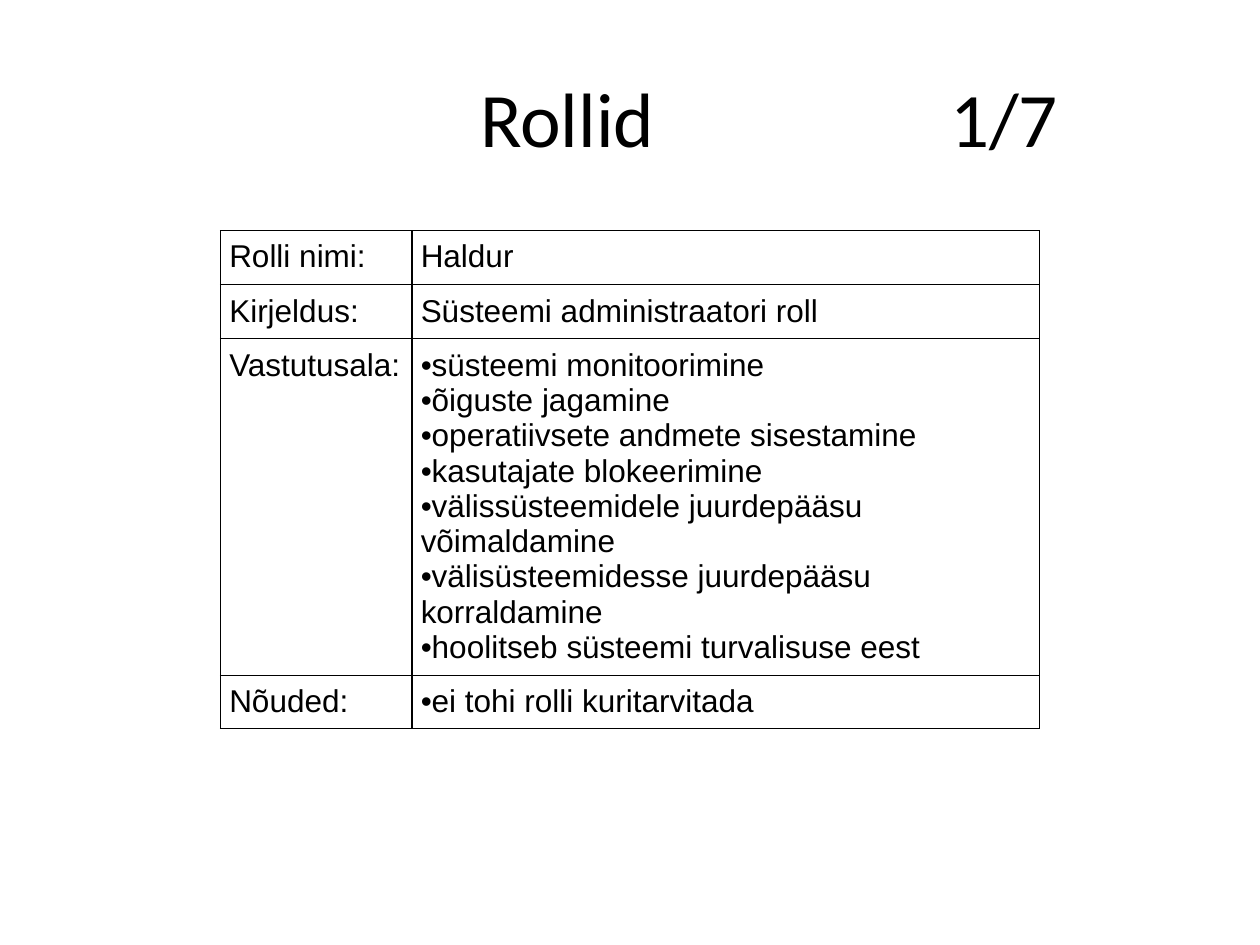
"""Build the role card slide: a title with a page count and a two-column table."""
from lxml import etree
from pptx import Presentation, util as u
from pptx.dml.color import RGBColor
from pptx.enum import text
from pptx.oxml import ns

TITLE = ("Rollid", "1/7")
ROWS = [
    ("Rolli nimi:", "Haldur"),
    ("Kirjeldus:", "Süsteemi administraatori roll"),
    ("Vastutusala:", [
        "süsteemi monitoorimine",
        "õiguste jagamine",
        "operatiivsete andmete sisestamine",
        "kasutajate blokeerimine",
        "välissüsteemidele juurdepääsu võimaldamine",
        "välisüsteemidesse juurdepääsu korraldamine",
        "hoolitseb süsteemi turvalisuse eest",
    ]),
    ("Nõuded:", ["ei tohi rolli kuritarvitada"]),
]
THEME = {
    "ink": "000000",
    "title": {"name": "Calibri", "size": u.Pt(44)},
    "body": {"name": "Arial", "size": u.Pt(18)},
    "border": u.Pt(0.75),
    "inset": u.Inches(0.07),
}
SLIDE_W, SLIDE_H = u.Inches(10), u.Inches(7.5)
TITLE_TABS = (3.21, 6.94)
TABLE_TOP = u.Inches(1.83)
COLUMNS = (1.52, 4.98)
ROW_HEIGHTS = (0.43, 0.43, 2.67, 0.42)


def set_attrs(obj, values):
    """Set each named value on an object."""
    for name, value in values.items():
        setattr(obj, name, value)


def add(parent, tag, **attrs):
    """Append a DrawingML element."""
    return etree.SubElement(parent, ns.qn(tag), attrs)


def style(p, role):
    """Give a paragraph the font of its role."""
    set_attrs(p.font, THEME[role])
    p.font.color.rgb = RGBColor.from_string(THEME["ink"])


def add_title(slide):
    """Place the title and its page count on tab stops."""
    sp = slide.shapes.title
    set_attrs(sp, dict(left=u.Inches(0.5), top=u.Inches(0.3),
                       width=u.Inches(9), height=u.Inches(1.25)))
    tf = sp.text_frame
    tf.vertical_anchor = text.MSO_ANCHOR.MIDDLE
    p = tf.paragraphs[0]
    p.text = "".join("\t" + part for part in TITLE)
    p.alignment = text.PP_ALIGN.LEFT
    tabs = add(p._p.get_or_add_pPr(), "a:tabLst")
    for pos in TITLE_TABS:
        add(tabs, "a:tab", pos=str(u.Inches(pos)), algn="l")
    style(p, "title")


def add_borders(cell):
    """Draw a thin line on all four sides of a cell."""
    tc_pr = cell._tc.get_or_add_tcPr()
    for i, side in enumerate("LRTB"):
        ln = add(tc_pr, f"a:ln{side}", w=str(THEME["border"]))
        add(add(ln, "a:solidFill"), "a:srgbClr", val=THEME["ink"])
        tc_pr.insert(i, ln)


def add_bullet(p):
    """Put a bullet in the body font before a paragraph."""
    p_pr = p._p.get_or_add_pPr()
    add(p_pr, "a:buFont", typeface=THEME["body"]["name"])
    add(p_pr, "a:buChar", char="•")


def fill_cell(cell, content):
    """Write plain text, or a list as bullets, into a cell."""
    bulleted = isinstance(content, list)
    lines = content if bulleted else [content]
    cell.fill.background()
    set_attrs(cell, {f"margin_{side}": THEME["inset"]
                     for side in ("left", "right", "top", "bottom")})
    add_borders(cell)
    tf = cell.text_frame
    tf.text = "\n".join(lines)
    for p in tf.paragraphs:
        if bulleted:
            add_bullet(p)
        style(p, "body")


def add_role_table(slide):
    """Add the role table, centred across the slide."""
    width = u.Inches(sum(COLUMNS))
    table = slide.shapes.add_table(
        len(ROWS), len(COLUMNS), (SLIDE_W - width) // 2, TABLE_TOP,
        width, u.Inches(sum(ROW_HEIGHTS))).table
    set_attrs(table, dict(first_row=False, horz_banding=False))
    for column, size in zip(table.columns, COLUMNS):
        column.width = u.Inches(size)
    for row, size, contents in zip(table.rows, ROW_HEIGHTS, ROWS):
        row.height = u.Inches(size)
        for cell, content in zip(row.cells, contents):
            fill_cell(cell, content)


def main():
    """Build and save the slide."""
    prs = Presentation()
    set_attrs(prs, dict(slide_width=SLIDE_W, slide_height=SLIDE_H))
    slide = prs.slides.add_slide(prs.slide_layouts[5])
    add_title(slide)
    add_role_table(slide)
    prs.save("out.pptx")


if __name__ == "__main__":
    main()
